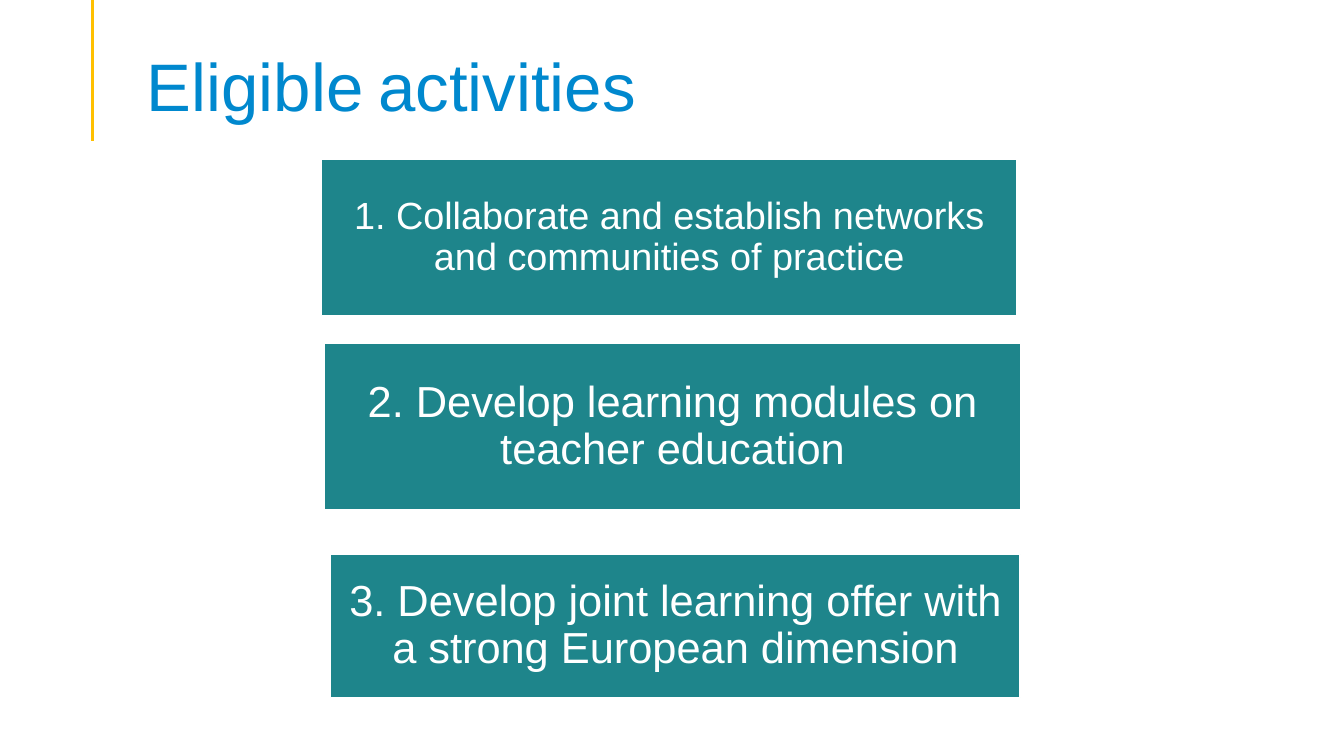
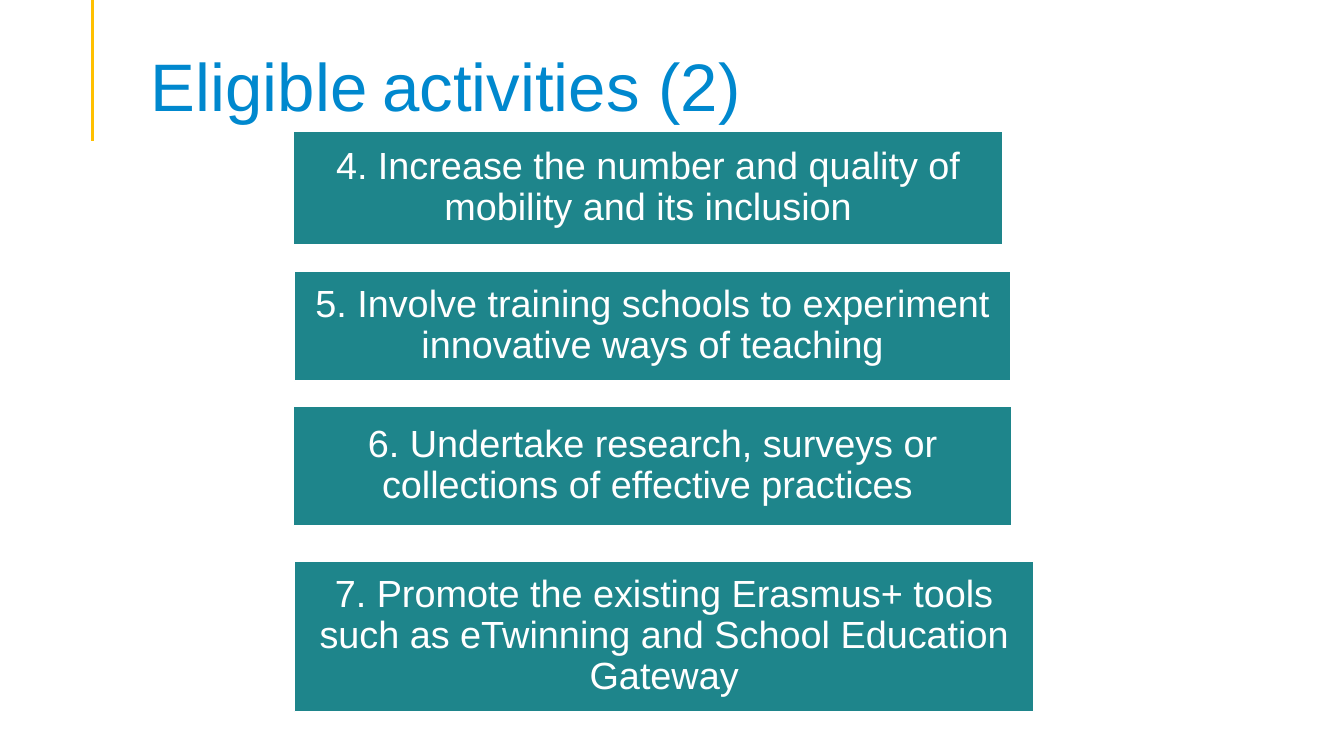
from lxml import etree
from pptx import Presentation
from pptx.dml.color import RGBColor
from pptx.enum.shapes import MSO_CONNECTOR, MSO_SHAPE
from pptx.enum.text import MSO_ANCHOR, MSO_AUTO_SIZE, PP_ALIGN
from pptx.oxml.ns import qn
from pptx.util import Pt

RECTANGLE = MSO_SHAPE.RECTANGLE
STRAIGHT = MSO_CONNECTOR.STRAIGHT
MIDDLE = MSO_ANCHOR.MIDDLE
CENTER = PP_ALIGN.CENTER
GROW = MSO_AUTO_SIZE.SHAPE_TO_FIT_TEXT

# Content: title words, title left and width, then
# activities as (text, font size, left, top, width, height)
SLIDES = [
    {
        "title": ("Eligible", "activities"),
        "title_box": (97.9, 367.2),
        "activities": [
            ("1. Collaborate and establish networks and communities of practice",
             27, 229.7, 113.8, 496.8, 111.6),
            ("2. Develop learning modules on teacher education",
             31, 232, 245.5, 496.8, 118.8),
            ("3. Develop joint learning offer with a strong European dimension",
             31, 236.2, 396, 492.5, 102.2),
        ],
    },
    {
        "title": ("Eligible", "activities (2)"),
        "title_box": (100.8, 440),
        "activities": [
            ("4. Increase the number and quality of mobility and its inclusion",
             27, 209.5, 93.6, 506.9, 81.4),
            ("5. Involve training schools to experiment innovative ways of teaching",
             27, 210.2, 193.7, 511.9, 78.5),
            ("6. Undertake research, surveys or collections of effective practices ",
             27, 209.5, 290.2, 513.4, 85),
            ("7. Promote the existing Erasmus+ tools\n"
             "such as eTwinning and School Education Gateway",
             27, 210.2, 401, 528.5, 107.3),
        ],
    },
]

# Shared style
FONT = "Arial"
TITLE_BLUE, TEAL, AMBER, WHITE = "0088CE", "1E858B", "FFC000", "FFFFFF"
TITLE_SIZE, TITLE_GAP_SIZE = 48, 37.3
TITLE_TOP, TITLE_HEIGHT = 28.1, 65.5
ACCENT_X, ACCENT_LENGTH = 66.2, 100.8
INSET_RATIO = 0.3  # box padding relative to font size


def color(value):
    return RGBColor.from_string(value)


def style_font(font, size, value):
    font.name = FONT
    font.size = Pt(size)
    font.color.rgb = color(value)


def add_accent(slide):
    accent = slide.shapes.add_connector(
        STRAIGHT, Pt(ACCENT_X), Pt(0), Pt(ACCENT_X), Pt(ACCENT_LENGTH))
    accent.line.color.rgb = color(AMBER)
    accent.line.width = Pt(2.25)
    etree.SubElement(accent._element.spPr, qn("a:effectLst"))


def add_title(slide, words, left, width):
    box = slide.shapes.add_textbox(
        Pt(left), Pt(TITLE_TOP), Pt(width), Pt(TITLE_HEIGHT))
    frame = box.text_frame
    frame.word_wrap = False
    frame.auto_size = GROW
    first, second = words
    for text, size in ((first, TITLE_SIZE), (" ", TITLE_GAP_SIZE),
                       (second, TITLE_SIZE)):
        run = frame.paragraphs[0].add_run()
        run.text = text
        style_font(run.font, size, TITLE_BLUE)


def add_activity(slide, text, size, left, top, width, height):
    box = slide.shapes.add_shape(
        RECTANGLE, Pt(left), Pt(top), Pt(width), Pt(height))
    box.shadow.inherit = False
    box.fill.solid()
    box.fill.fore_color.rgb = color(TEAL)
    box.line.color.rgb = color(WHITE)
    box.line.width = Pt(1)

    frame = box.text_frame
    frame.word_wrap = True
    frame.vertical_anchor = MIDDLE
    inset = Pt(size * INSET_RATIO)
    frame.margin_left = frame.margin_right = inset
    frame.margin_top = frame.margin_bottom = inset
    paragraph = frame.paragraphs[0]
    paragraph.text = text
    paragraph.alignment = CENTER
    paragraph.line_spacing = 0.9
    paragraph.space_after = Pt(round(size * 0.35, 1))
    for run in paragraph.runs:
        style_font(run.font, size, WHITE)


def main():
    deck = Presentation()
    deck.slide_width, deck.slide_height = Pt(960), Pt(540)
    blank = deck.slide_layouts[6]
    for content in SLIDES:
        slide = deck.slides.add_slide(blank)
        add_accent(slide)
        add_title(slide, content["title"], *content["title_box"])
        for activity in content["activities"]:
            add_activity(slide, *activity)
    deck.save("out.pptx")


if __name__ == "__main__":
    main()
